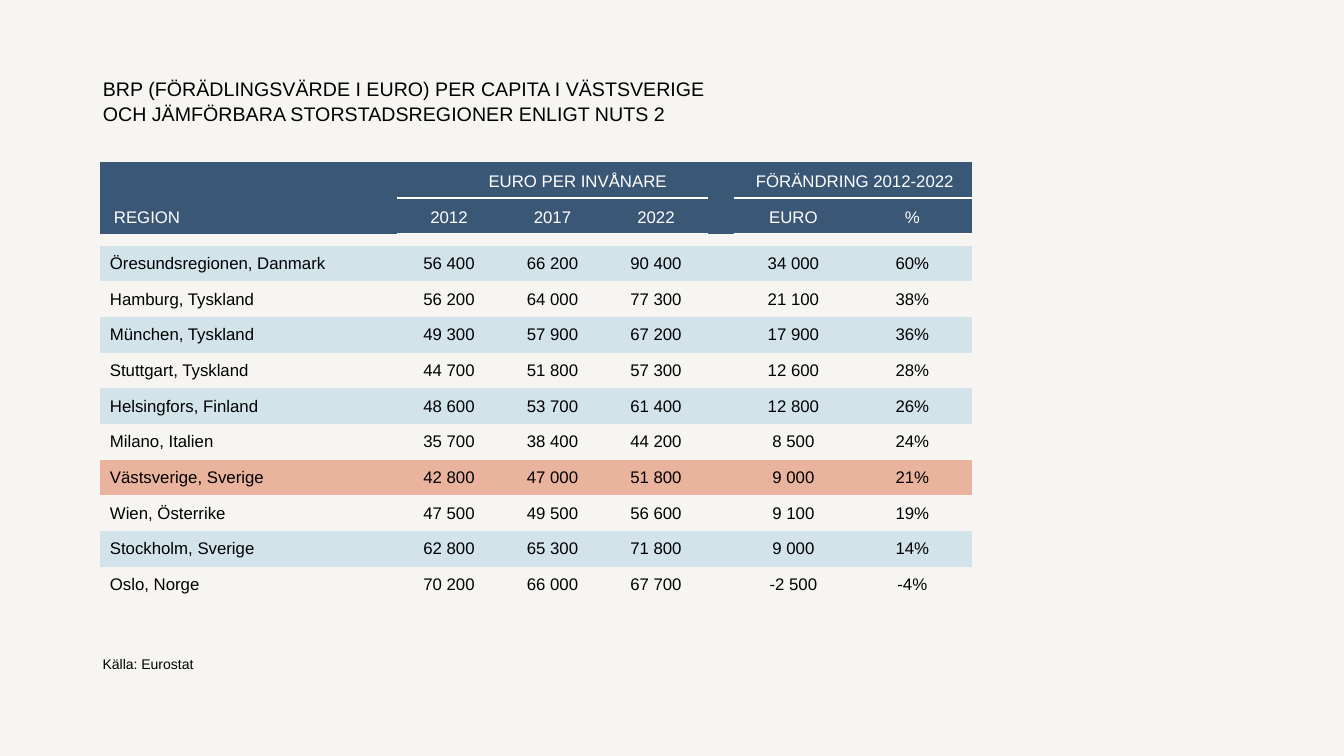
from copy import deepcopy

from lxml import etree
from pptx import Presentation
from pptx.dml.color import RGBColor
from pptx.enum.text import MSO_ANCHOR, MSO_AUTO_SIZE, PP_ALIGN
from pptx.oxml.ns import qn
from pptx.util import Inches, Pt

LEFT, CENTER = PP_ALIGN.LEFT, PP_ALIGN.CENTER
TOP, MIDDLE, BOTTOM = MSO_ANCHOR.TOP, MSO_ANCHOR.MIDDLE, MSO_ANCHOR.BOTTOM
NO_AUTOFIT = MSO_AUTO_SIZE.NONE
TITLE_ONLY = 5
PLAIN_TABLE_STYLE = "{2D5ABB26-0587-4C30-8999-92F81FD0307C}"

FONT = "Arial"
PAPER, BLACK, WHITE = "F6F5F1", "000000", "FFFFFF"
NAVY, PALE_BLUE, SALMON = "3B5776", "D2E3EA", "EAB39E"

TITLE = ("BRP (FÖRÄDLINGSVÄRDE I EURO) PER CAPITA I VÄSTSVERIGE\v"
         "OCH JÄMFÖRBARA STORSTADSREGIONER ENLIGT NUTS 2")
HIGHLIGHTED = "Västsverige, Sverige"
GAP_COLUMN = 4
GROUPS = [("EURO PER INVÅNARE", 1, 3, 0.51), ("FÖRÄNDRING 2012-2022", 5, 6, 0.05)]
HEADINGS = ["REGION", "2012", "2017", "2022", "", "EURO", "%"]
REGIONS = [
    ["Öresundsregionen, Danmark", "56 400", "66 200", "90 400", "", "34 000", "60%"],
    ["Hamburg, Tyskland", "56 200", "64 000", "77 300", "", "21 100", "38%"],
    ["München, Tyskland", "49 300", "57 900", "67 200", "", "17 900", "36%"],
    ["Stuttgart, Tyskland", "44 700", "51 800", "57 300", "", "12 600", "28%"],
    ["Helsingfors, Finland", "48 600", "53 700", "61 400", "", "12 800", "26%"],
    ["Milano, Italien", "35 700", "38 400", "44 200", "", "8 500", "24%"],
    [HIGHLIGHTED, "42 800", "47 000", "51 800", "", "9 000", "21%"],
    ["Wien, Österrike", "47 500", "49 500", "56 600", "", "9 100", "19%"],
    ["Stockholm, Sverige", "62 800", "65 300", "71 800", "", "9 000", "14%"],
    ["Oslo, Norge", "70 200", "66 000", "67 700", "", "-2 500", "-4%"],
]
TABLE_HEIGHT, SPACER_HEIGHT = 4.37, 0.12
HEADER_ROWS = 2
FIRST_REGION_ROW = HEADER_ROWS + 1
COLUMN_WIDTHS = [2.95] + [3.08 / 3] * 3 + [0.26] + [1.18] * 2


def color(hex_string):
    return RGBColor.from_string(hex_string)


def write_text(frame, text, size=12, ink=BLACK, align=LEFT, spacing=1.0):
    para = frame.paragraphs[0]
    para.text = text
    para.alignment = align
    para.line_spacing = spacing
    for span in para.runs:
        span.font.name = FONT
        span.font.size = Pt(size)
        span.font.bold = False
        span.font.color.rgb = color(ink)
    for line_break in para._p.findall(qn("a:br")):
        line_break.append(deepcopy(para.runs[0]._r.rPr))


def place_frame(box, left, top, width, height, anchor):
    box.left, box.top = Inches(left), Inches(top)
    box.width, box.height = Inches(width), Inches(height)
    frame = box.text_frame
    frame.word_wrap = True
    frame.auto_size = NO_AUTOFIT
    frame.vertical_anchor = anchor
    return frame


def fill_cell(cell, fill):
    """Fill the cell, or clear it, and keep an empty one from stretching its row."""
    cell.vertical_anchor = MIDDLE
    cell.margin_left = cell.margin_right = Inches(0.01)
    cell.margin_top = cell.margin_bottom = 0
    if fill:
        cell.fill.solid()
        cell.fill.fore_color.rgb = color(fill)
    else:
        cell.fill.background()
    if not cell.text:
        etree.SubElement(cell.text_frame.paragraphs[0]._p, qn("a:endParaRPr"), sz="100")


def rule_cell(cell, side):
    """Draw a white rule on one side: lnT or lnB."""
    line = etree.Element(qn("a:" + side), w=str(Pt(1)))
    solid = etree.SubElement(line, qn("a:solidFill"))
    etree.SubElement(solid, qn("a:srgbClr"), val=WHITE)
    cell._tc.get_or_add_tcPr().insert(0, line)


def write_row(table, row, texts, fill, indent, **text_format):
    for column, text in enumerate(texts):
        cell = table.cell(row, column)
        if text:
            align = CENTER if column else LEFT
            write_text(cell.text_frame, text, align=align, **text_format)
        fill_cell(cell, fill)
    table.cell(row, 0).margin_left = Inches(indent)


def write_header(table):
    header_format = {"ink": WHITE, "spacing": 1.15}
    labels = [""] * len(HEADINGS)
    for label, first, last, indent in GROUPS:
        labels[first] = label
    write_row(table, 0, labels, NAVY, 0.05, **header_format)
    write_row(table, 1, HEADINGS, NAVY, 0.14, **header_format)
    for label, first, last, indent in GROUPS:
        for column in range(first, last + 1):
            rule_cell(table.cell(0, column), "lnB")
            rule_cell(table.cell(1, column), "lnT")
        table.cell(0, first).margin_left = Inches(indent)
        table.cell(0, first).merge(table.cell(0, last))


def add_region_table(page):
    row_count = FIRST_REGION_ROW + len(REGIONS)
    table = page.shapes.add_table(
        row_count, len(HEADINGS), Inches(0.99), Inches(1.61),
        Inches(sum(COLUMN_WIDTHS)), Inches(TABLE_HEIGHT)).table
    table.first_row = table.horz_banding = False
    table._tbl.tblPr.find(qn("a:tableStyleId")).text = PLAIN_TABLE_STYLE
    for column, width in zip(table.columns, COLUMN_WIDTHS):
        column.width = Inches(width)
    for row in table.rows:
        row.height = Inches((TABLE_HEIGHT - SPACER_HEIGHT) / (row_count - 1))
    table.rows[HEADER_ROWS].height = Inches(SPACER_HEIGHT)

    write_header(table)
    write_row(table, HEADER_ROWS, [""] * len(HEADINGS), None, 0.01)
    for index, region in enumerate(REGIONS):
        band = None if index % 2 else PALE_BLUE
        fill = SALMON if region[0] == HIGHLIGHTED else band
        write_row(table, FIRST_REGION_ROW + index, region, fill, 0.1)


def main():
    deck = Presentation()
    deck.slide_width, deck.slide_height = Inches(13.33), Inches(7.5)
    page = deck.slides.add_slide(deck.slide_layouts[TITLE_ONLY])
    page.background.fill.solid()
    page.background.fill.fore_color.rgb = color(PAPER)

    title = place_frame(page.shapes.title, 0.92, 0.7, 7.25, 0.51, TOP)
    write_text(title, TITLE, size=14, spacing=1.07)
    add_region_table(page)
    source_box = page.shapes.add_textbox(0, 0, 0, 0)
    source = place_frame(source_box, 0.92, 6.45, 4.73, 0.27, BOTTOM)
    write_text(source, "Källa: Eurostat", size=10)
    deck.save("out.pptx")


if __name__ == "__main__":
    main()
